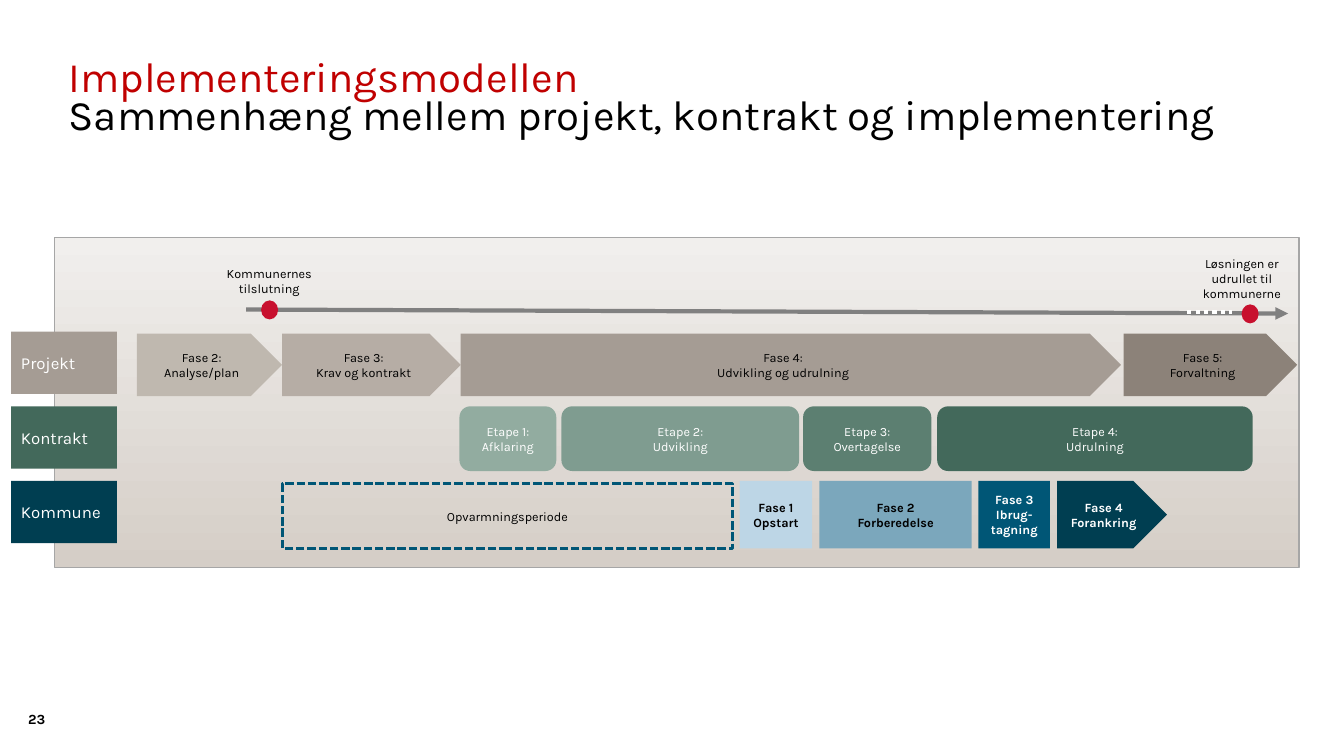
import pptx
import pptx.dml.color
import pptx.enum.dml
import pptx.enum.shapes
import pptx.enum.text
import pptx.oxml
import pptx.util

Cm = pptx.util.Cm
Pt = pptx.util.Pt
RGBColor = pptx.dml.color.RGBColor
Shape = pptx.enum.shapes.MSO_SHAPE
Dash = pptx.enum.dml.MSO_LINE
Align = pptx.enum.text.PP_ALIGN
Anchor = pptx.enum.text.MSO_ANCHOR

FONT = "Karla"
BLACK = RGBColor(0x00, 0x00, 0x00)
WHITE = RGBColor(0xFF, 0xFF, 0xFF)
TITLE_RED = RGBColor(0xC0, 0x00, 0x00)
DOT_RED = RGBColor(0xC8, 0x10, 0x2E)
ARROW_GREY = RGBColor(0x80, 0x80, 0x80)
PANEL_LINE = RGBColor(0xA6, 0xA6, 0xA6)
PANEL_BOTTOM = RGBColor(0xD5, 0xCE, 0xC7)
PANEL_TOP = RGBColor(0xF1, 0xEF, 0xED)
SAND_1 = RGBColor(0xBF, 0xB8, 0xAF)
SAND_2 = RGBColor(0xB6, 0xAD, 0xA5)
SAND_3 = RGBColor(0xA5, 0x9C, 0x94)
SAND_4 = RGBColor(0x8C, 0x82, 0x79)
GREEN_1 = RGBColor(0x92, 0xAC, 0xA0)
GREEN_2 = RGBColor(0x7F, 0x9C, 0x90)
GREEN_3 = RGBColor(0x5C, 0x7F, 0x71)
GREEN_4 = RGBColor(0x43, 0x69, 0x5B)
BLUE_1 = RGBColor(0xBD, 0xD6, 0xE6)
BLUE_2 = RGBColor(0x7B, 0xA7, 0xBC)
BLUE_3 = RGBColor(0x00, 0x56, 0x76)
BLUE_4 = RGBColor(0x00, 0x3E, 0x51)

# Left, width, fill, text (cm)
PROJECT_PHASES = [
    (3.45, 3.66, SAND_1, "Fase 2:\nAnalyse/plan"),
    (7.11, 4.5, SAND_2, "Fase 3:\nKrav og kontrakt"),
    (11.61, 16.64, SAND_3, "Fase 4:\nUdvikling og udrulning"),
    (28.32, 4.37, SAND_4, "Fase 5:\nForvaltning"),
]
CONTRACT_STAGES = [
    (11.58, 2.44, GREEN_1, "Etape 1:\nAfklaring"),
    (14.15, 5.99, GREEN_2, "Etape 2:\nUdvikling"),
    (20.24, 3.23, GREEN_3, "Etape 3:\nOvertagelse"),
    (23.62, 7.95, GREEN_4, "Etape 4:\nUdrulning"),
]
# Left, width, fill, text, text colour, outline (cm)
MUNICIPAL_PHASES = [
    (18.64, 1.83, BLUE_1, "Fase 1\nOpstart", BLACK, Shape.RECTANGLE),
    (20.65, 3.84, BLUE_2, "Fase 2\nForberedelse", BLACK, Shape.RECTANGLE),
    (24.66, 1.8, BLUE_3, "Fase 3 Ibrug-tagning", WHITE, Shape.RECTANGLE),
    (26.64, 2.77, BLUE_4, "Fase 4 Forankring", WHITE, Shape.PENTAGON),
]
ROW_LABELS = [("Projekt", SAND_3), ("Kontrakt", GREEN_4), ("Kommune", BLUE_4)]


def style_font(font, size, color, bold=False):
    font.name = FONT
    font.size = Pt(size)
    font.bold = bold
    font.color.rgb = color


def write(frame, text, size, color, bold=False, align=Align.CENTER):
    frame.word_wrap = True
    frame.text = text
    for paragraph in frame.paragraphs:
        paragraph.alignment = align
        style_font(paragraph.font, size, color, bold)


def add_block(slide, outline, left, top, width, height, fill=None):
    """Add a shape without border or shadow; no fill colour leaves it open."""
    block = slide.shapes.add_shape(outline, Cm(left), Cm(top), Cm(width), Cm(height))
    block.shadow.inherit = False
    block.line.fill.background()
    if fill is None:
        block.fill.background()
    else:
        block.fill.solid()
        block.fill.fore_color.rgb = fill
    block.text_frame.vertical_anchor = Anchor.MIDDLE
    return block


def add_text_box(slide, left, top, width, height):
    box = slide.shapes.add_textbox(Cm(left), Cm(top), Cm(width), Cm(height))
    box.text_frame.word_wrap = True
    return box.text_frame


def remove_margins(frame):
    frame.margin_left = frame.margin_right = 0
    frame.margin_top = frame.margin_bottom = 0


def add_line(slide, start, end, color):
    line = slide.shapes.add_connector(
        pptx.enum.shapes.MSO_CONNECTOR.STRAIGHT, *map(Cm, start + end))
    line.line.color.rgb = color
    line.line.width = Pt(3)
    properties = line._element.spPr
    properties.append(pptx.oxml.parse_xml(
        '<a:effectLst xmlns:a="http://schemas.openxmlformats.org/drawingml/2006/main"/>'))
    return line


def add_arrowhead(line):
    line.line._get_or_add_ln().append(pptx.oxml.parse_xml(
        '<a:tailEnd xmlns:a="http://schemas.openxmlformats.org/drawingml/2006/main"'
        ' type="triangle"/>'))


def add_title(slide):
    frame = add_text_box(slide, 1.73, 1.6, 30.28, 2.34)
    remove_margins(frame)
    title = frame.paragraphs[0]
    title.line_spacing = Pt(27)
    heading = title.add_run()
    heading.text = "Implementeringsmodellen"
    style_font(heading.font, 30, TITLE_RED)
    title.add_line_break()
    subtitle = title.add_run()
    subtitle.text = "Sammenhæng mellem projekt, kontrakt og implementering"
    style_font(subtitle.font, 30, BLACK)


def add_panel(slide):
    panel = add_block(slide, Shape.RECTANGLE, 1.37, 5.99, 31.37, 8.31)
    panel.fill.gradient()
    panel.fill.gradient_angle = 90
    for stop, color in zip(panel.fill.gradient_stops, (PANEL_BOTTOM, PANEL_TOP)):
        stop.color.rgb = color
    panel.line.color.rgb = PANEL_LINE
    panel.line.width = Pt(1)


def add_milestone(slide, dot_left, dot_top, text, text_left, text_top, text_height):
    add_block(slide, Shape.OVAL, dot_left, dot_top, 0.43, 0.48, DOT_RED)
    caption = add_text_box(slide, text_left, text_top, 2.95, text_height)
    write(caption, text, 9, BLACK)


def add_timeline(slide):
    add_arrowhead(add_line(slide, (6.2, 7.8), (32.46, 7.9), ARROW_GREY))
    add_milestone(slide, 6.58, 7.57, "Kommunernes tilslutning", 5.31, 6.58, 1.02)
    add_milestone(slide, 31.29, 7.67, "Løsningen er udrullet til kommunerne",
                  29.82, 6.32, 1.42)
    gap = add_line(slide, (29.92, 7.87), (31.06, 7.87), WHITE)
    gap.line.dash_style = Dash.ROUND_DOT
    gap.line._get_or_add_ln().prstDash.set("val", "sysDot")


def add_warm_up(slide):
    warm_up = add_block(slide, Shape.RECTANGLE, 7.11, 12.19, 11.35, 1.63)
    warm_up.line.color.rgb = BLUE_3
    warm_up.line.width = Pt(2)
    warm_up.line.dash_style = Dash.SQUARE_DOT
    warm_up.line._get_or_add_ln().prstDash.set("val", "sysDash")
    write(warm_up.text_frame, "Opvarmningsperiode", 9, BLACK)


def add_slide_number(slide):
    frame = add_text_box(slide, 0.71, 17.35, 1.32, 0.99)
    remove_margins(frame)
    frame.vertical_anchor = Anchor.BOTTOM
    write(frame, "23", 10, BLACK, bold=True, align=Align.LEFT)
    frame.paragraphs[0].line_spacing = Pt(13)


def main():
    deck = pptx.Presentation()
    deck.slide_width, deck.slide_height = Cm(33.87), Cm(19.05)
    slide = deck.slides.add_slide(deck.slide_layouts[6])
    add_title(slide)
    add_panel(slide)
    for left, width, fill, text in PROJECT_PHASES:
        phase = add_block(slide, Shape.PENTAGON, left, 8.41, width, 1.57, fill)
        write(phase.text_frame, text, 9, BLACK)
    for left, width, fill, text in CONTRACT_STAGES:
        stage = add_block(slide, Shape.ROUNDED_RECTANGLE, left, 10.24, width, 1.63, fill)
        write(stage.text_frame, text, 9, WHITE)
    add_timeline(slide)
    add_warm_up(slide)
    for left, width, fill, text, color, outline in MUNICIPAL_PHASES:
        phase = add_block(slide, outline, left, 12.12, width, 1.7, fill)
        write(phase.text_frame, text, 9, color, bold=True)
    for row, (text, fill) in enumerate(ROW_LABELS):
        label = add_block(slide, Shape.RECTANGLE, 0.28, 8.36 + 1.88 * row, 2.67, 1.57, fill)
        write(label.text_frame, text, 12, WHITE, align=Align.LEFT)
    add_slide_number(slide)
    deck.save("out.pptx")


if __name__ == "__main__":
    main()
